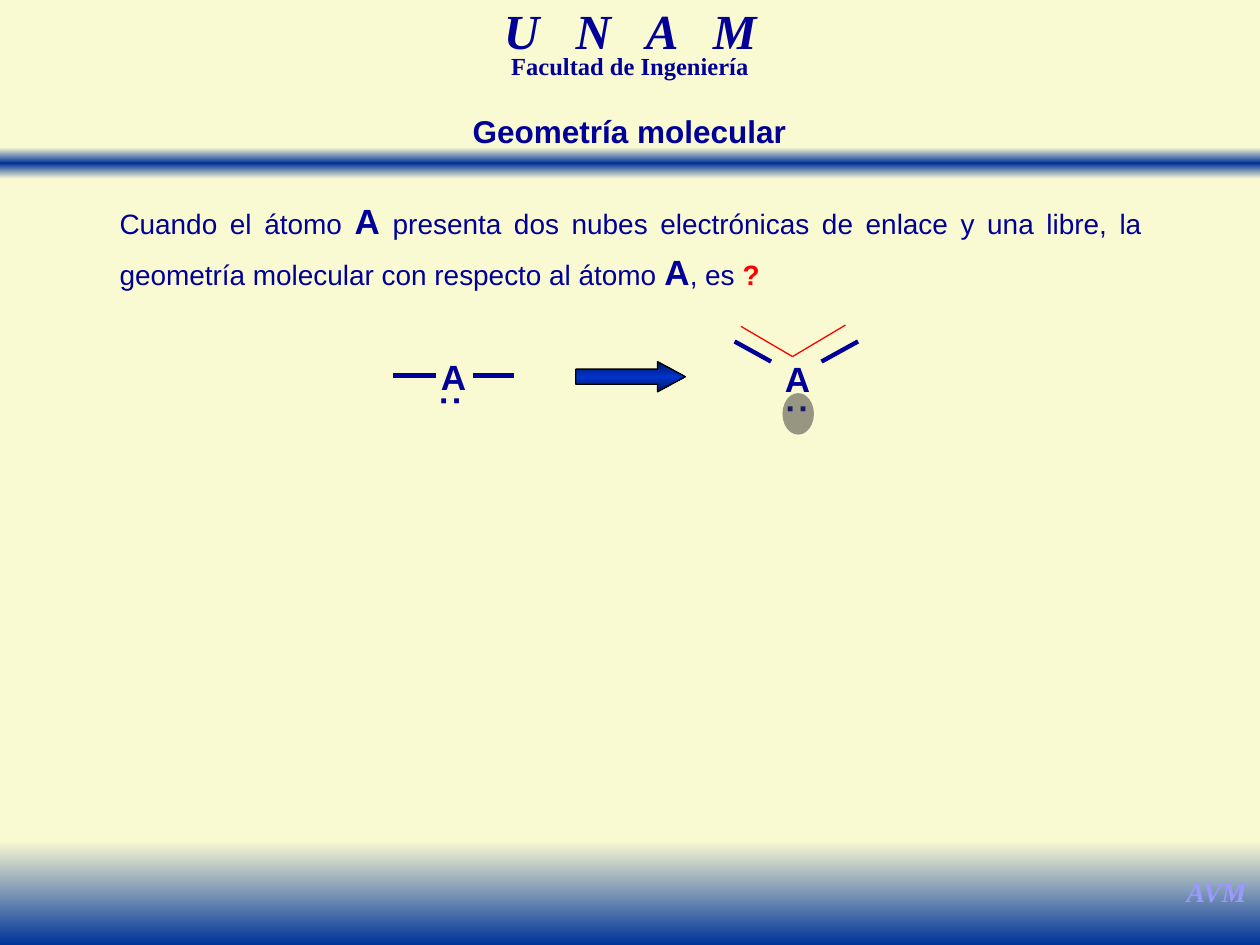
"""Build the molecular geometry slide."""
from lxml import etree
from pptx import Presentation
from pptx import util as u
from pptx.dml.color import RGBColor
from pptx.enum import shapes, text
from pptx.oxml import ns

THEME = {
    "cream": "FAFAD2", "band": "003399", "ink": "000099", "red": "FF0000",
    "lilac": "9999FF", "cloud": "333333", "arrow": "0033CC",
    "arrow_edge": "00175C", "outline": "000000",
    "sans": "Arial", "serif": "Times New Roman",
    "banner": 28, "heading": 18, "atom": 20, "body": 16, "faculty": 14,
    "bond": 2.5, "thin": 0.75,
}
AL = text.PP_ALIGN

prs = Presentation()
prs.slide_width, prs.slide_height = u.Inches(10), u.Inches(7.5)
COL = prs.slide_width // 10
s = prs.slides.add_slide(prs.slide_layouts[6])
s.background.fill.solid()
s.background.fill.fore_color.rgb = RGBColor.from_string(THEME["cream"])


def add_text(runs, box, size="body", font="sans", color="ink", bold=True, italic=False,
             align=AL.LEFT, spacing=None, wrap=False, inset=0.1, rotation=0):
    """Add a text box; each run is a string and its overrides."""
    sp = s.shapes.add_textbox(*[int(v * COL) for v in box])
    sp.rotation = rotation
    tf = sp.text_frame
    tf.word_wrap = wrap
    tf.auto_size = text.MSO_AUTO_SIZE.SHAPE_TO_FIT_TEXT
    tf.margin_left = tf.margin_right = int(inset * COL)
    tf.margin_top = tf.margin_bottom = int(inset / 2 * COL)
    p = tf.paragraphs[0]
    p.alignment = align
    p.line_spacing = spacing
    for words, own in runs:
        r = p.add_run()
        r.text = words
        r.font.name = THEME[font]
        r.font.size = u.Pt(THEME[own.get("size", size)])
        r.font.bold = own.get("bold", bold)
        r.font.italic = italic
        r.font.color.rgb = RGBColor.from_string(THEME[own.get("color", color)])
        if "tracking" in own:
            r.font._element.set("spc", str(own["tracking"] * 100))


def add_gradient(kind, box, colors):
    """Add a shape with evenly spaced vertical gradient stops."""
    sp = s.shapes.add_shape(kind, *[int(v * COL) for v in box])
    sp.shadow.inherit = False
    sp.line.fill.background()
    sp.fill.gradient()
    sp.fill.gradient_angle = 270
    stops = sp._element.spPr.find(ns.qn("a:gradFill")).find(ns.qn("a:gsLst"))
    for old in list(stops):
        stops.remove(old)
    for i, color in enumerate(colors):
        gs = etree.SubElement(stops, ns.qn("a:gs"), pos=str(100000 * i // (len(colors) - 1)))
        etree.SubElement(gs, ns.qn("a:srgbClr"), val=THEME[color])
    return sp


RECT = shapes.MSO_SHAPE.RECTANGLE
add_gradient(RECT, (0, 1.17, 10, 0.25), ["cream", "band", "cream"])
add_gradient(RECT, (0, 6.67, 10, 0.83), ["cream", "band"])
add_text([("AVM", {})], (9.31, 6.89, 0.69, 0.37), font="serif", color="lilac",
         italic=True, align=AL.CENTER)
add_text([("U N A ", {"tracking": 7}), ("M", {})], (3.04, 0.08, 3.92, 0.43), size="banner",
         font="serif", italic=True, align=AL.CENTER, spacing=0.7, wrap=True)
add_text([("Facultad de Ingeniería", {})], (3.21, 0.42, 3.58, 0.26), size="faculty",
         font="serif", align=AL.CENTER, spacing=0.7, wrap=True)
add_text([("Geometría molecular", {})], (3.64, 0.84, 2.71, 0.4), size="heading",
         align=AL.CENTER)

atom = ("A", {"size": "atom", "bold": True})
add_text([("Cuando el átomo ", {}), atom,
          (" presenta dos nubes electrónicas de enlace y una libre, "
           "la geometría molecular con respecto al átomo ", {}), atom,
          (", es ", {}), ("?", {"color": "red", "bold": True})],
         (0.85, 1.47, 8.31, 0.9), bold=False, align=AL.JUSTIFY, spacing=1.2, wrap=True)

for atom_at, pair_at in [((3.5, 2.82), (3.47, 2.97)), ((6.23, 2.84), (6.22, 3.03))]:
    add_text([atom], (*atom_at, 0.2, 0.33), inset=0)
    add_text([(":", {})], (*pair_at, 0.29, 0.43), size="atom", rotation=90)

sp = add_gradient(shapes.MSO_SHAPE.RIGHT_ARROW, (4.57, 2.87, 0.87, 0.24),
                  ["arrow_edge", "arrow", "arrow_edge"])
sp.adjustments[0], sp.adjustments[1] = 0.5, 0.92
sp.line.color.rgb = RGBColor.from_string(THEME["outline"])
sp.line.width = u.Pt(THEME["thin"])

cloud = s.shapes.add_shape(shapes.MSO_SHAPE.OVAL,
                           *[int(v * COL) for v in (6.21, 3.12, 0.25, 0.33)])
cloud.shadow.inherit = False
cloud.line.fill.background()
cloud.fill.solid()
cloud.fill.fore_color.rgb = RGBColor.from_string(THEME["cloud"])
rgb = cloud._element.spPr.find(ns.qn("a:solidFill"))[0]
etree.SubElement(rgb, ns.qn("a:alpha"), val="50000")

for color, width, ends in [
    ("ink", "bond", (3.75, 2.98, 4.08, 2.98)),
    ("ink", "bond", (3.12, 2.98, 3.46, 2.98)),
    ("ink", "bond", (6.52, 2.87, 6.81, 2.71)),
    ("ink", "bond", (6.12, 2.87, 5.83, 2.71)),
    ("red", "thin", (6.29, 2.83, 5.88, 2.59)),
    ("red", "thin", (6.29, 2.83, 6.71, 2.58)),
]:
    line = s.shapes.add_connector(shapes.MSO_CONNECTOR.STRAIGHT, *[int(v * COL) for v in ends])
    line.line.color.rgb = RGBColor.from_string(THEME[color])
    line.line.width = u.Pt(THEME[width])
    etree.SubElement(line._element.spPr, ns.qn("a:effectLst"))

prs.save("out.pptx")
